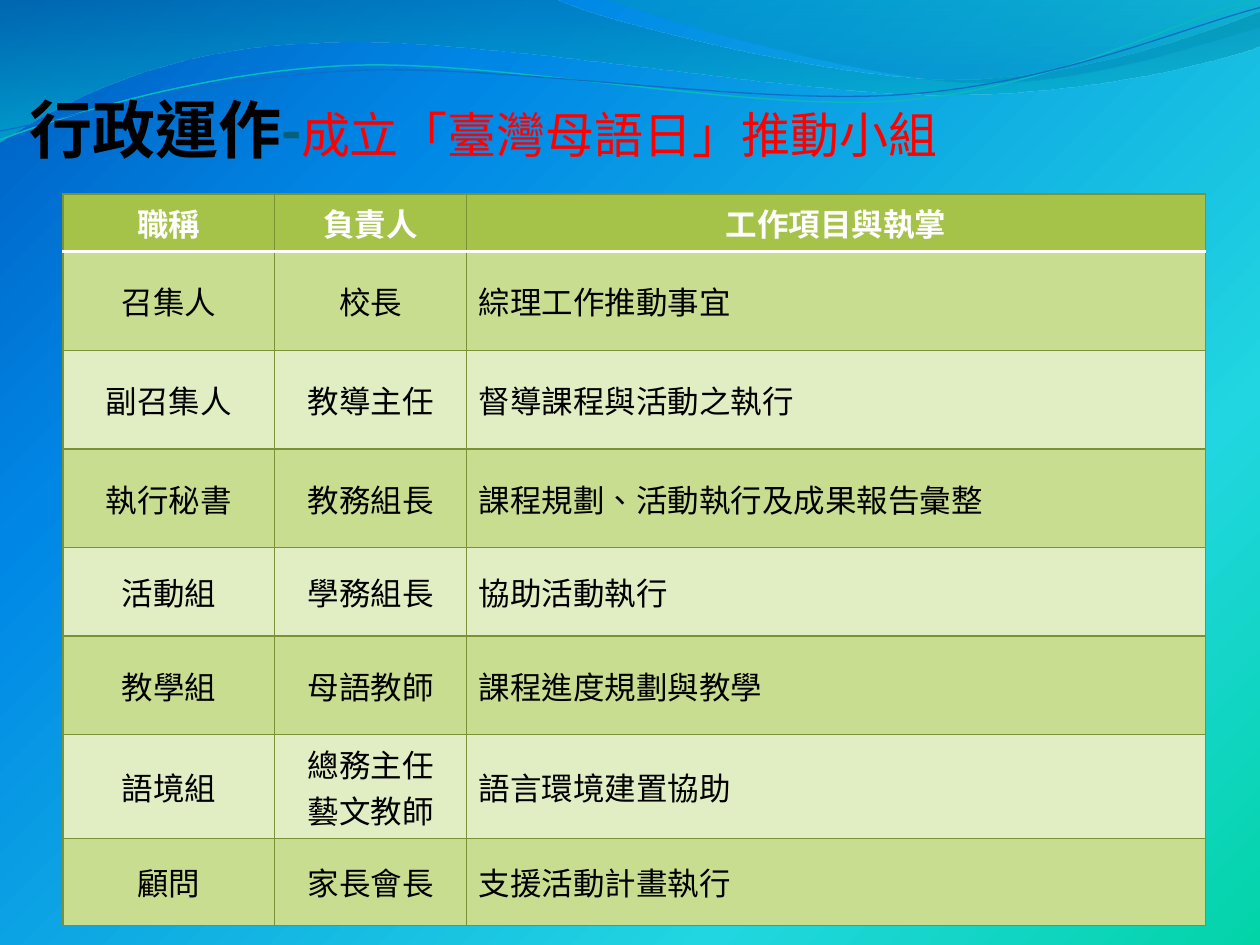
import pptx
import pptx.dml.color
import pptx.enum.lang
import pptx.enum.text
import pptx.oxml
import pptx.oxml.ns
import pptx.util

Cm = pptx.util.Cm
Pt = pptx.util.Pt
RGBColor = pptx.dml.color.RGBColor
MIDDLE = pptx.enum.text.MSO_ANCHOR.MIDDLE
CENTER = pptx.enum.text.PP_ALIGN.CENTER
LEFT = pptx.enum.text.PP_ALIGN.LEFT
CHINESE = pptx.enum.lang.MSO_LANGUAGE_ID.TRADITIONAL_CHINESE
NAMESPACE = pptx.oxml.ns.nsdecls("a")

BLACK = RGBColor(0x00, 0x00, 0x00)
WHITE = RGBColor(0xFF, 0xFF, 0xFF)
RED = RGBColor(0xFF, 0x00, 0x00)
DARK_TEAL = RGBColor(0x04, 0x61, 0x7B)
TEAL = RGBColor(0x0A, 0xB8, 0xBF)
BLUE = RGBColor(0x0F, 0x6F, 0xC6)
GREEN = RGBColor(0xA5, 0xC2, 0x49)
BAND_DARK = RGBColor(0xC9, 0xDD, 0x91)
BAND_LIGHT = RGBColor(0xE1, 0xED, 0xC3)
OLIVE = RGBColor(0x7B, 0x91, 0x35)

TITLE_RUNS = [
    ("行政運作", 36, BLACK, True),
    ("-", 36, DARK_TEAL, True),
    ("成立「臺灣母語日」推動小組", 28, RED, False),
]
TABLE_ROWS = [
    ("職稱", "負責人", "工作項目與執掌"),
    ("召集人", "校長", "綜理工作推動事宜"),
    ("副召集人", "教導主任", "督導課程與活動之執行"),
    ("執行秘書", "教務組長", "課程規劃、活動執行及成果報告彙整"),
    ("活動組", "學務組長", "協助活動執行"),
    ("教學組", "母語教師", "課程進度規劃與教學"),
    ("語境組", "總務主任\n藝文教師", "語言環境建置協助"),
    ("顧問", "家長會長", "支援活動計畫執行"),
]
COLUMN_WIDTHS = [4.27, 3.86, 14.91]
ROW_HEIGHTS = [1.16, 1.99, 1.99, 1.99, 1.78, 1.99, 2.09, 1.76]

# Gradient stops: position %, colour, opacity %
BACKGROUND_STOPS = [(0, "03D4A8", 100), (25, "21D6E0", 100),
                    (75, "0087E6", 100), (100, "005CBF", 100)]
CORNER = '<a:path path="circle"><a:fillToRect l="100000" t="100000"/></a:path>'
DOWNWARD = '<a:lin ang="5400000" scaled="0"/>'

# Wave outlines in units of 2.54 cm: two numbers draw a line, six a Bézier curve
WAVE_UNIT = Cm(2.54)
PRECISION = 1000
WAVE_BANDS = [
    ([(0, 0), (4.4, -0.01), (4.76, 0.17, 6.64, 0.63, 7.58, 0.63),
      (8.53, 0.63, 9.58, 0.26, 10, 0.09), (10.01, 0.36),
      (9.83, 0.44, 8.7, 0.76, 7.46, 0.75), (6.22, 0.75, 3.82, 0.28, 2.57, 0.34),
      (1.29, 0.36, 0.46, 0.83, -0.01, 1.13)],
     [(0, "0074A1", 45), (100, "00C6CF", 55)]),
    ([(4.79, -0.01), (5.09, 0.11, 6.82, 0.62, 7.69, 0.65),
      (8.56, 0.69, 9.61, 0.32, 10, 0.21), (10, 0)],
     [(0, "00A1A9", 30), (80, "008BBF", 45)]),
]
WAVE_LINES = [
    ([(0, 1.11), (0.48, 0.93, 1.58, 0.57, 2.77, 0.52),
      (3.95, 0.47, 5.93, 0.89, 7.13, 0.8), (8.33, 0.71, 9.38, 0.15, 9.98, -0.02)],
     TEAL, 0.85),
    ([(0, 1.04), (0.47, 0.96, 1.64, 0.61, 2.83, 0.56),
      (4.03, 0.51, 5.97, 0.84, 7.17, 0.75), (8.36, 0.67, 9.41, 0.21, 10, 0.06)],
     BLUE, 0.75),
]


def set_gradient(fill, properties, stops, direction):
    """Give the fill held by the XML element properties these stops."""
    fill.gradient()
    old = properties.find(pptx.oxml.ns.qn("a:gradFill"))
    stop_xml = "".join(
        f'<a:gs pos="{position * 1000}"><a:srgbClr val="{color}">'
        f'<a:alpha val="{opacity * 1000}"/></a:srgbClr></a:gs>'
        for position, color, opacity in stops)
    new = pptx.oxml.parse_xml(
        f'<a:gradFill {NAMESPACE} rotWithShape="1">'
        f'<a:gsLst>{stop_xml}</a:gsLst>{direction}</a:gradFill>')
    properties.replace(old, new)


def add_wave(slide, outline, closed):
    """Build the outline from its end points, then bend the curved segments."""
    outline = [[round(value * PRECISION) for value in segment] for segment in outline]
    ends = [segment[-2:] for segment in outline]
    builder = slide.shapes.build_freeform(*ends[0], scale=WAVE_UNIT / PRECISION)
    builder.add_line_segments(ends[1:], close=closed)
    shape = builder.convert_to_shape()
    shape.shadow.inherit = False

    left, top = (min(values) for values in zip(*ends))
    straight_lines = list(shape._element.iter(pptx.oxml.ns.qn("a:lnTo")))
    for line, segment in zip(straight_lines, outline[1:]):
        if len(segment) == 6:
            points = "".join(f'<a:pt x="{x - left}" y="{y - top}"/>'
                             for x, y in zip(segment[::2], segment[1::2]))
            curve = pptx.oxml.parse_xml(
                f'<a:cubicBezTo {NAMESPACE}>{points}</a:cubicBezTo>')
            line.getparent().replace(line, curve)
    return shape


def add_waves(slide):
    for outline, stops in WAVE_BANDS:
        band = add_wave(slide, outline, True)
        band.line.fill.background()
        set_gradient(band.fill, band._element.spPr, stops, DOWNWARD)
    for outline, color, width in WAVE_LINES:
        wave = add_wave(slide, outline, False)
        wave.fill.background()
        wave.line.color.rgb = color
        wave.line.width = Pt(width)


def add_title(slide):
    frame = slide.shapes.add_textbox(Cm(0.6), Cm(0.48), Cm(21.16), Cm(2.87)).text_frame
    frame.word_wrap = True
    frame.vertical_anchor = pptx.enum.text.MSO_ANCHOR.BOTTOM
    frame.margin_left = frame.margin_right = frame.margin_bottom = 0
    paragraph = frame.paragraphs[0]
    paragraph.font.name = "Calibri"
    for text, size, color, bold in TITLE_RUNS:
        run = paragraph.add_run()
        run.text = text
        run.font.language_id = CHINESE
        run.font.size = Pt(size)
        run.font.color.rgb = color
        run.font.bold = bold


def set_borders(cell, borders):
    properties = cell._tc.get_or_add_tcPr()
    for index, (side, (color, width)) in enumerate(borders.items()):
        properties.insert(index, pptx.oxml.parse_xml(
            f'<a:ln{side} {NAMESPACE} w="{Pt(width)}"><a:solidFill>'
            f'<a:srgbClr val="{color}"/></a:solidFill></a:ln{side}>'))


def add_duty_table(slide):
    table = slide.shapes.add_table(
        len(TABLE_ROWS), len(COLUMN_WIDTHS), Cm(1.27), Cm(3.91),
        Cm(sum(COLUMN_WIDTHS)), Cm(sum(ROW_HEIGHTS))).table
    for column, width in zip(table.columns, COLUMN_WIDTHS):
        column.width = Cm(width)
    thin, header_rule = (OLIVE, 0.75), (WHITE, 2)
    for row_index, (texts, height) in enumerate(zip(TABLE_ROWS, ROW_HEIGHTS)):
        table.rows[row_index].height = Cm(height)
        header = row_index == 0
        band = BAND_DARK if row_index % 2 else BAND_LIGHT
        for column_index, text in enumerate(texts):
            cell = table.cell(row_index, column_index)
            cell.text = text
            cell.vertical_anchor = MIDDLE
            cell.fill.solid()
            cell.fill.fore_color.rgb = GREEN if header else band
            set_borders(cell, {"L": thin, "R": thin,
                               "T": header_rule if row_index == 1 else thin,
                               "B": header_rule if header else thin})
            for paragraph in cell.text_frame.paragraphs:
                paragraph.alignment = CENTER if header or column_index < 2 else LEFT
                paragraph.font.name = "Cambria"
                paragraph.font.size = Pt(18)
                paragraph.font.bold = header
                paragraph.font.color.rgb = WHITE if header else BLACK
                paragraph.runs[0].font.language_id = CHINESE


def main():
    presentation = pptx.Presentation()
    presentation.slide_width, presentation.slide_height = Cm(25.4), Cm(19.05)
    slide = presentation.slides.add_slide(presentation.slide_layouts[6])
    fill = slide.background.fill
    set_gradient(fill, slide._element.cSld.bg.bgPr, BACKGROUND_STOPS, CORNER)
    add_waves(slide)
    add_title(slide)
    add_duty_table(slide)
    presentation.save("out.pptx")


if __name__ == "__main__":
    main()
